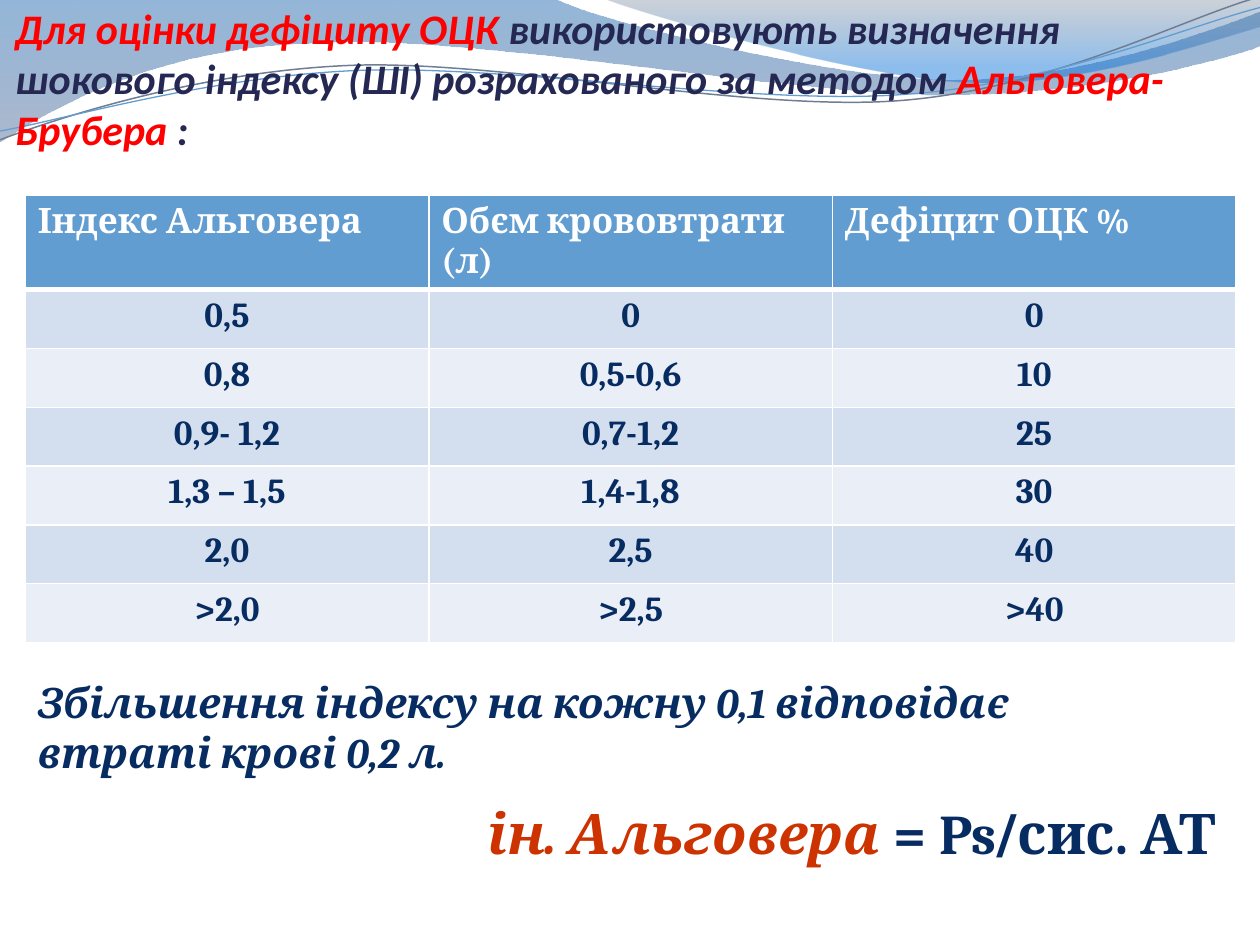
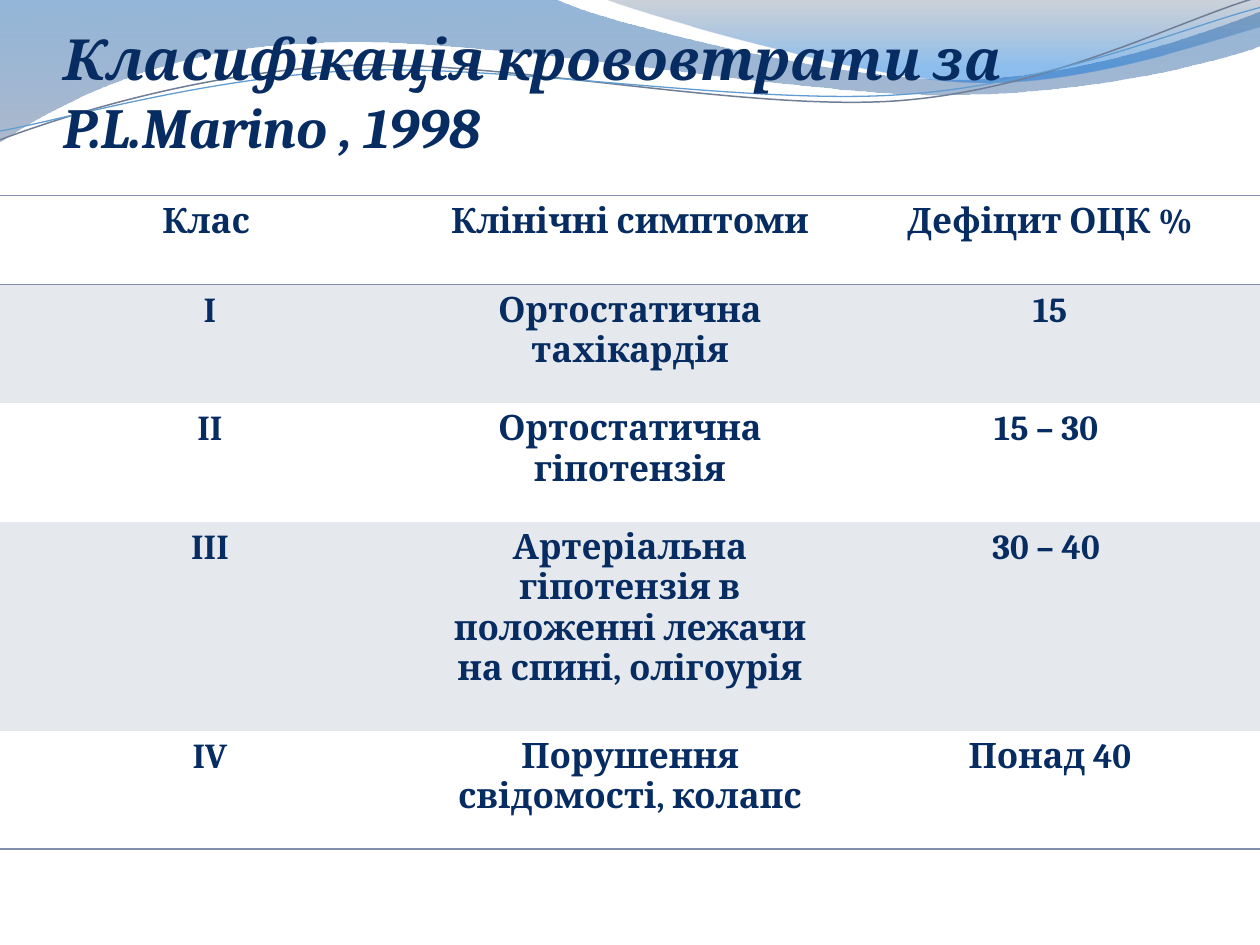
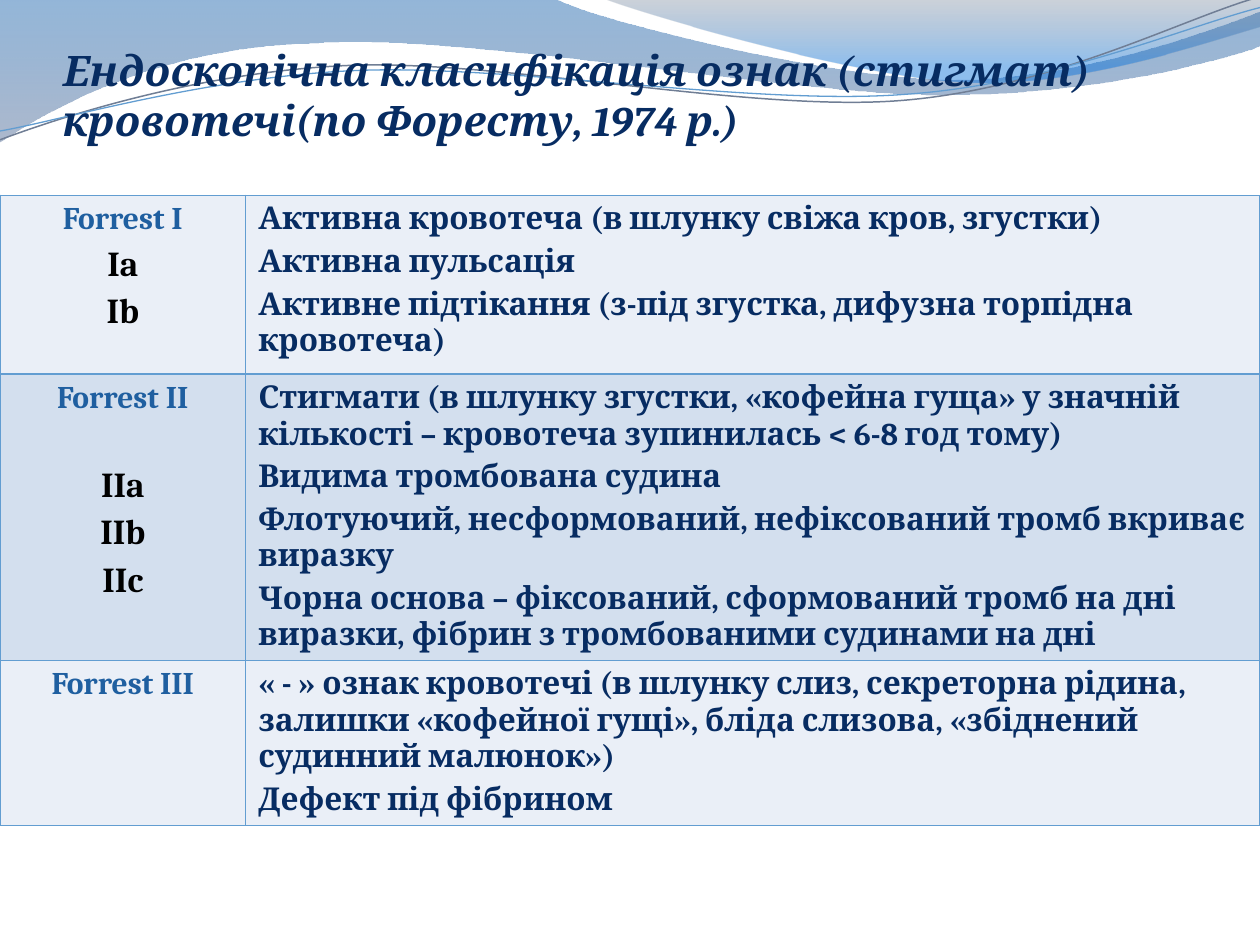
from lxml import etree
from pptx import Presentation
from pptx.dml.color import RGBColor
from pptx.enum.text import MSO_ANCHOR, MSO_AUTO_SIZE, PP_ALIGN
from pptx.oxml.ns import qn
from pptx.util import Inches, Pt

LEFT, CENTER, RIGHT = PP_ALIGN.LEFT, PP_ALIGN.CENTER, PP_ALIGN.RIGHT
BOTTOM, NO_FIT = MSO_ANCHOR.BOTTOM, MSO_AUTO_SIZE.NONE
NO_TABLE_STYLE = "{2D5ABB26-0587-4C30-8999-92F81FD0307C}"

rgb = RGBColor.from_string
NAVY, INK, RED, RUST = "072C62", "242852", "FF0000", "CC3300"
SKY, SLATE, WHITE, BLACK, LABEL = "629DD1", "7F8FA9", "FFFFFF", "000000", "1F5FA0"
BAND_DARK, BAND_LIGHT, BAND_GREY = "D3DFEE", "EAEFF7", "E5E9EE"
WIDTH, HEIGHT = 10, 7.5
TABLE_TOP = 1.55


def style(runs, color, **values):
    font_values = {"name": "Cambria", "bold": True, **values}
    for run in runs:
        run.font.color.rgb = rgb(color)
        for attribute, value in font_values.items():
            setattr(run.font, attribute, value)


def add_grid(slide, left, columns, heights, rows, fills, border, sides, size, aligns, space=0):
    """Add a table; fills and sides (border widths in points) are given per row."""
    table = slide.shapes.add_table(
        len(rows), len(columns), Inches(left), Inches(TABLE_TOP),
        Inches(sum(columns)), Inches(sum(heights))).table
    table.first_row = table.horz_banding = False
    table._tbl.tblPr.find(qn("a:tableStyleId")).text = NO_TABLE_STYLE
    for column, width in zip(table.columns, columns):
        column.width = Inches(width)
    for r, texts in enumerate(rows):
        table.rows[r].height = Inches(heights[r])
        for c, text in enumerate(texts):
            cell = table.cell(r, c)
            properties = cell._tc.get_or_add_tcPr()
            for side, points in sides[r].items():
                line = etree.SubElement(properties, qn("a:ln" + side), w=str(Pt(points)))
                solid = etree.SubElement(line, qn("a:solidFill"))
                etree.SubElement(solid, qn("a:srgbClr"), val=border)
            if fills[r]:
                cell.fill.solid()
                cell.fill.fore_color.rgb = rgb(fills[r])
            else:
                cell.fill.background()
            cell.text_frame.text = text
            for paragraph in cell.text_frame.paragraphs:
                paragraph.alignment = aligns[c]
                paragraph.space_before = Pt(space)
                style(paragraph.runs, NAVY, size=Pt(size))
    return table


prs = Presentation()
prs.slide_width, prs.slide_height = Inches(WIDTH), Inches(HEIGHT)
title_only = prs.slide_layouts[5]

# Titles: each is a list of (text, colour) parts
titles = [
    dict(left=0.12, width=9.38, height=1.22, font="Calibri", size=24, parts=[
        ("Для оцінки дефіциту ОЦК ", RED),
        ("використовують визначення шокового індексу (ШІ) розрахованого за методом ", INK),
        ("Альговера-Брубера", RED), (" :", INK)]),
    dict(left=0.5, width=9, height=1.27, font="Cambria", size=32.4, parts=[
        ("Класифікація крововтрати за P.L.Marino , 1998", NAVY)]),
    dict(left=0.5, width=9, height=1.15, font="Cambria", size=24, parts=[
        ("Ендоскопічна класифікація ознак (стигмат) кровотечі(по Форесту, 1974 р.)", NAVY)]),
]
frame_values = dict(margin_left=0, margin_top=0, margin_right=0, margin_bottom=0,
                    vertical_anchor=BOTTOM, auto_size=NO_FIT, word_wrap=True)
slides = []
for heading in titles:
    slide = prs.slides.add_slide(title_only)
    slides.append(slide)
    title = slide.shapes.title
    title.left, title.top = Inches(heading["left"]), 0
    title.width, title.height = Inches(heading["width"]), Inches(heading["height"])
    for attribute, value in frame_values.items():
        setattr(title.text_frame, attribute, value)
    paragraph = title.text_frame.paragraphs[0]
    paragraph.alignment = LEFT
    for text, color in heading["parts"]:
        run = paragraph.add_run()
        run.text = text
        style([run], color, name=heading["font"], size=Pt(heading["size"]), italic=True)
shock_index, blood_loss, forrest = slides

# Waves shared by all slides: two numbers make a line, six make a Bezier curve
waves = [
    dict(start=(0, 0), gradient=[(0, "125EAA", 45), (1, "697FA4", 55)], steps=[
        (4.4, -0.01), (4.76, 0.17, 6.64, 0.63, 7.58, 0.63), (8.53, 0.63, 9.58, 0.26, 10, 0.09),
        (10.01, 0.36), (9.83, 0.44, 8.7, 0.76, 7.46, 0.75), (6.22, 0.75, 3.82, 0.28, 2.57, 0.34),
        (1.29, 0.36, 0.46, 0.83, -0.01, 1.13), (0, 0)]),
    dict(start=(4.79, -0.01), gradient=[(0, "596982", 30), (0.8, "0670DA", 45)], steps=[
        (5.09, 0.11, 6.82, 0.62, 7.69, 0.65), (8.56, 0.69, 9.61, 0.32, 10, 0.21), (10, 0),
        (4.79, -0.01)]),
    dict(start=(0, 1.11), line=("707E95", 0.85), steps=[
        (0.48, 0.93, 1.58, 0.57, 2.77, 0.52), (3.95, 0.47, 5.93, 0.89, 7.13, 0.8),
        (8.33, 0.71, 9.38, 0.15, 9.98, -0.02)]),
    dict(start=(0, 1.04), line=(SKY, 0.75), steps=[
        (0.47, 0.96, 1.64, 0.61, 2.83, 0.56), (4.03, 0.51, 5.97, 0.84, 7.17, 0.75),
        (8.36, 0.67, 9.41, 0.21, 10, 0.06)]),
]
for depth, wave in enumerate(waves):
    builder = shock_index.shapes.build_freeform(*map(Inches, wave["start"]))
    builder.add_line_segments([tuple(map(Inches, step[-2:])) for step in wave["steps"]],
                              close="gradient" in wave)
    ribbon = builder.convert_to_shape()
    ribbon.shadow.inherit = False
    # Bend the straight segments that have control points
    for segment, step in zip(list(ribbon.element.iter(qn("a:lnTo"))), wave["steps"]):
        if len(step) == 6:
            segment.tag = qn("a:cubicBezTo")
            for i, (x, y) in enumerate([step[:2], step[2:4]]):
                control = etree.Element(qn("a:pt"), x=str(Inches(x) - ribbon.left),
                                        y=str(Inches(y) - ribbon.top))
                segment.insert(i, control)
    if "gradient" in wave:
        ribbon.line.fill.background()
        ribbon.fill.gradient()
        ribbon.fill.gradient_angle = 270
        for stop, (position, color, _) in zip(ribbon.fill.gradient_stops, wave["gradient"]):
            stop.position = position
            stop.color.rgb = rgb(color)
        for tint, (_, _, opacity) in zip(ribbon.element.iter(qn("a:srgbClr")), wave["gradient"]):
            etree.SubElement(tint, qn("a:alpha"), val=str(opacity * 1000))
    else:
        color, thickness = wave["line"]
        ribbon.fill.background()
        ribbon.line.color.rgb = rgb(color)
        ribbon.line.width = Pt(thickness)
    # The layout carries the waves, behind its placeholders
    title_only.shapes.element.insert(2 + depth, ribbon.element)

# Slide 1: shock index
BOX = dict(L=1, R=1, T=1, B=1)
index_rows = [
    ("Індекс Альговера", "Обєм крововтрати (л)", "Дефіцит ОЦК %"),
    ("0,5", "0", "0"),
    ("0,8", "0,5-0,6", "10"),
    ("0,9- 1,2", "0,7-1,2", "25"),
    ("1,3 – 1,5", "1,4-1,8", "30"),
    ("2,0", "2,5", "40"),
    (">2,0", ">2,5", ">40"),
]
index_table = add_grid(
    shock_index, 0.2, [9.61 / 3] * 3, [0.75] + [2.8 / 6] * 6, index_rows,
    fills=[SKY] + [BAND_DARK, BAND_LIGHT] * 3, border=WHITE,
    sides=[{**BOX, "B": 3}, {**BOX, "T": 3}] + [BOX] * 5, size=20, aligns=[CENTER] * 3)
for cell in index_table.rows[0].cells:
    header = cell.text_frame.paragraphs[0]
    header.alignment = LEFT
    style(header.runs, WHITE)

remarks = [
    ((0.2, 5.32, 8.35, 0.91), LEFT, [
        ("Збільшення індексу на кожну 0,1 відповідає втраті крові 0,2 л.", NAVY,
         dict(size=Pt(24), italic=True))]),
    ((3.03, 6.23, 6.83, 0.71), RIGHT, [
        ("ін. Альговера ", RUST, dict(size=Pt(32), italic=True)),
        ("= Ps", NAVY, dict(size=Pt(32))),
        ("/", NAVY, dict(size=Pt(32), name="Roboto")),
        ("сис. АТ", NAVY, dict(size=Pt(32))),
        (" ", NAVY, dict(size=Pt(36)))]),
]
for place, align, parts in remarks:
    frame = shock_index.shapes.add_textbox(*map(Inches, place)).text_frame
    frame.word_wrap = True
    frame.paragraphs[0].alignment = align
    for text, color, values in parts:
        run = frame.paragraphs[0].add_run()
        run.text = text
        style([run], color, **values)

# Slide 2: classes of blood loss
class_rows = [
    ("Клас ", "Клінічні симптоми", "Дефіцит ОЦК %"),
    ("I", "Ортостатична тахікардія", "15"),
    ("II", "Ортостатична гіпотензія", "15 – 30 "),
    ("III", "Артеріальна гіпотензія в положенні лежачи на спині, олігоурія", "30 – 40 "),
    ("IV", "Порушення свідомості, колапс", "Понад 40"),
]
add_grid(
    blood_loss, 0, [WIDTH / 3] * 3, [0.71, 0.94, 0.94, 1.66, 0.94], class_rows,
    fills=[None, BAND_GREY, None, BAND_GREY, None], border=SLATE,
    sides=[dict(T=1, B=1), {}, {}, {}, dict(B=1)], size=20, aligns=[CENTER] * 3)

# Slide 3: Forrest classification
forrest_rows = [
    ("Forrest I\nIa\nIb",
     "Активна кровотеча (в шлунку свіжа кров, згустки)\n"
     "Активна пульсація\n"
     "Активне підтікання (з-під згустка, дифузна торпідна кровотеча)"),
    ("Forrest II\nIIa\nIIb\nIIc",
     "Стигмати (в шлунку згустки, «кофейна гуща» у значній кількості – "
     "кровотеча зупинилась < 6-8 год тому)\n"
     "Видима тромбована судина\n"
     "Флотуючий, несформований, нефіксований тромб вкриває виразку\n"
     "Чорна основа – фіксований, сформований тромб на дні виразки, "
     "фібрин з тромбованими судинами на дні"),
    ("Forrest III",
     "« - » ознак кровотечі (в шлунку слиз, секреторна рідина, залишки "
     "«кофейної гущі», бліда слизова, «збіднений судинний малюнок»)\n"
     "Дефект під фібрином"),
]
forrest_table = add_grid(
    forrest, 0, [1.95, 8.05], [1.42, 2.27, 1.31], forrest_rows,
    fills=[BAND_LIGHT, BAND_DARK, BAND_LIGHT], border=SKY, sides=[BOX] * 3,
    size=18, aligns=[CENTER, LEFT], space=3.6)
for row in forrest_table.rows:
    grade, *subgrades = row.cells[0].text_frame.paragraphs
    style(grade.runs, LABEL)
    for subgrade in subgrades:
        subgrade.space_before = Pt(4)
        style(subgrade.runs, BLACK, size=Pt(20))
# IIa lines up with its description, below the two-line summary
forrest_table.cell(1, 0).text_frame.paragraphs[1].space_before = Pt(28)

prs.save("out.pptx")
